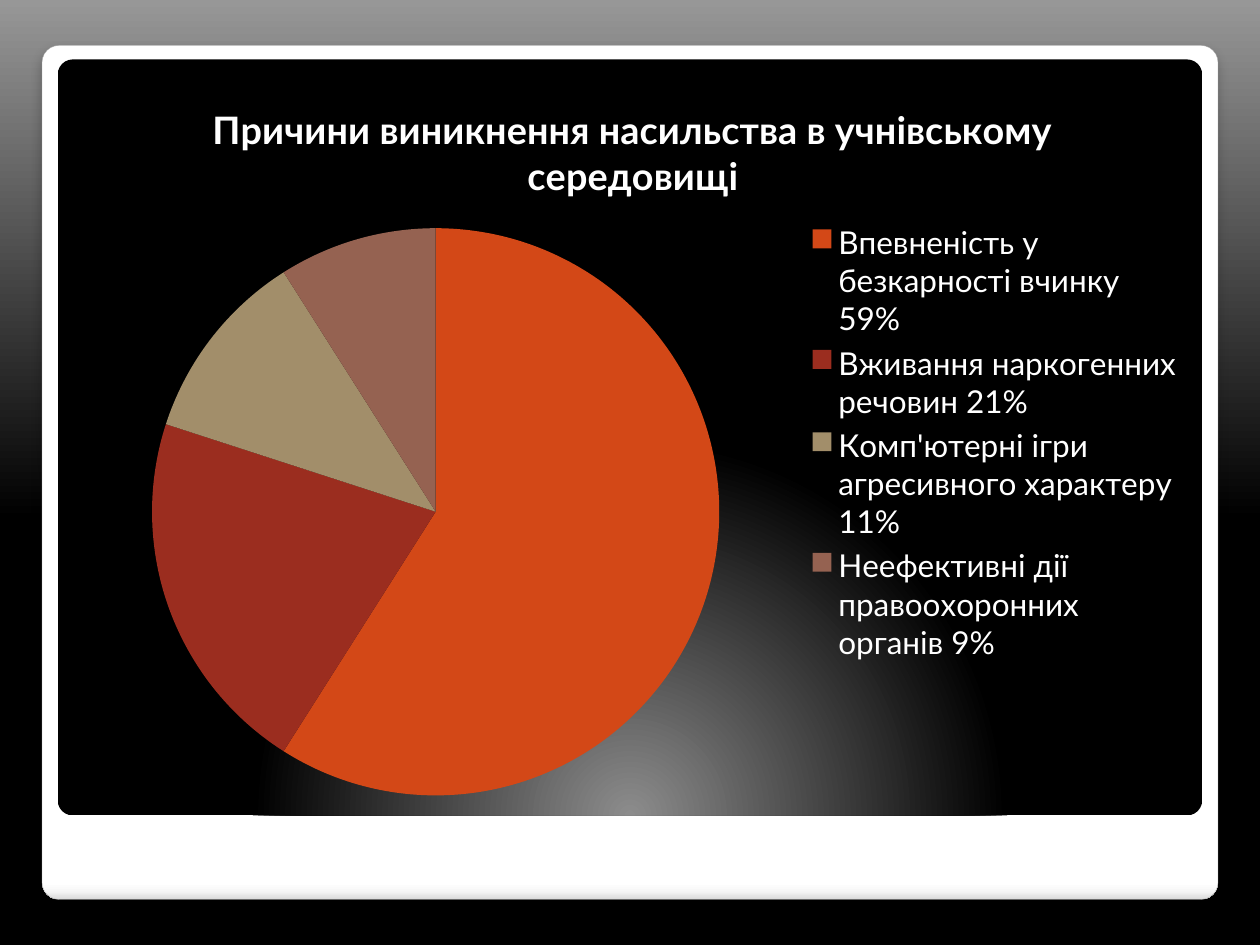
import pptx
import pptx.chart.data
import pptx.dml.color
import pptx.enum.chart
import pptx.enum.shapes
import pptx.oxml
import pptx.oxml.ns
import pptx.util

Pt = pptx.util.Pt
RGBColor = pptx.dml.color.RGBColor

BLACK = RGBColor(0x00, 0x00, 0x00)
WHITE = RGBColor(0xFF, 0xFF, 0xFF)
SKY_GRAY = RGBColor(0x97, 0x97, 0x97)
GLOW_GRAY = RGBColor(0x8C, 0x8C, 0x8C)
EDGE_LIGHT = RGBColor(0xF7, 0xF7, 0xF7)
EDGE_DARK = RGBColor(0xDA, 0xDA, 0xDA)
BORDER_GRAY = RGBColor(0xA4, 0xA4, 0xA4)
ORANGE = RGBColor(0xD3, 0x48, 0x17)
RED = RGBColor(0x9B, 0x2D, 0x1F)
SAND = RGBColor(0xA2, 0x8E, 0x6A)
BROWN = RGBColor(0x95, 0x62, 0x51)

FONT = "Lato"
TITLE = "Причини виникнення насильства в учнівському середовищі"
CAUSES = [
    ("Впевненість у безкарності вчинку 59%", 59, ORANGE),
    ("Вживання наркогенних речовин 21%", 21, RED),
    ("Комп'ютерні ігри агресивного характеру 11%", 11, SAND),
    ("Неефективні дії правоохоронних органів 9%", 9, BROWN),
]

DRAWING_NS = pptx.oxml.ns.nsdecls("a")
GLOW_FROM_BELOW = (
    '<a:path path="circle">'
    '<a:fillToRect l="50000" t="175000" r="50000" b="-75000"/></a:path>'
)


def linear(degrees):
    return f'<a:lin ang="{degrees * 60000}" scaled="0"/>'


def set_gradient(fill, parent, stops, direction):
    """Put a gradient of (percent, colour) stops where the parent's fill stands."""
    fill.solid()
    solid = parent.find(pptx.oxml.ns.qn("a:solidFill"))
    stop_xml = "".join(
        f'<a:gs pos="{percent * 1000}"><a:srgbClr val="{color}"/></a:gs>'
        for percent, color in stops
    )
    gradient = pptx.oxml.parse_xml(
        f'<a:gradFill {DRAWING_NS} rotWithShape="1">'
        f"<a:gsLst>{stop_xml}</a:gsLst>{direction}</a:gradFill>"
    )
    parent.replace(solid, gradient)


def paint_background(page):
    fill = page.background.fill
    fill.solid()
    properties = page.element.xpath("./p:cSld/p:bg/p:bgPr")[0]
    stops = [(0, BLACK), (45, BLACK), (100, SKY_GRAY)]
    set_gradient(fill, properties, stops, linear(270))


def add_panel(page, box, stops, direction):
    panel = page.shapes.add_shape(
        pptx.enum.shapes.MSO_SHAPE.ROUNDED_RECTANGLE, *map(Pt, box))
    panel.adjustments[0] = 0.02
    panel.shadow.inherit = False
    panel.line.fill.background()
    set_gradient(panel.fill, panel.element.spPr, stops, direction)
    return panel


def add_frame(page, box):
    stops = [(0, WHITE), (98, WHITE), (99, EDGE_LIGHT), (100, EDGE_DARK)]
    frame = add_panel(page, box, stops, linear(90))
    frame.line.color.rgb = BORDER_GRAY
    frame.line.width = Pt(0.16)
    effects = frame.element.spPr.find(pptx.oxml.ns.qn("a:effectLst"))
    effects.append(pptx.oxml.parse_xml(
        f'<a:outerShdw {DRAWING_NS} blurRad="{Pt(6)}" dist="{Pt(4)}" '
        'dir="5400000" algn="t" rotWithShape="0">'
        f'<a:srgbClr val="{BLACK}"><a:alpha val="25000"/></a:srgbClr>'
        "</a:outerShdw>"
    ))


def style_font(font, size, bold=False):
    font.name = FONT
    font.size = Pt(size)
    font.bold = bold
    font.color.rgb = WHITE


def place_plot(chart, left, top, width, height):
    """Fix the inner plot area, in fractions of the chart."""
    plot_area = chart.element.xpath("./c:chart/c:plotArea")[0]
    for layout in plot_area.xpath("./c:layout"):
        plot_area.remove(layout)
    plot_area.insert(0, pptx.oxml.parse_xml(
        f'<c:layout {pptx.oxml.ns.nsdecls("c")}><c:manualLayout>'
        '<c:layoutTarget val="inner"/>'
        '<c:xMode val="edge"/><c:yMode val="edge"/>'
        f'<c:x val="{left}"/><c:y val="{top}"/>'
        f'<c:w val="{width}"/><c:h val="{height}"/>'
        "</c:manualLayout></c:layout>"
    ))


def add_causes_chart(page, box):
    names, values, colors = zip(*CAUSES)
    data = pptx.chart.data.CategoryChartData()
    data.categories = names
    data.add_series(TITLE, values)
    chart = page.shapes.add_chart(
        pptx.enum.chart.XL_CHART_TYPE.PIE, *map(Pt, box), data).chart
    style_font(chart.font, 18)

    chart.has_title = True
    span = chart.chart_title.text_frame.paragraphs[0].add_run()
    span.text = TITLE
    style_font(span.font, 21.6, bold=True)
    chart.chart_title.include_in_layout = False

    chart.has_legend = True
    chart.legend.position = pptx.enum.chart.XL_LEGEND_POSITION.RIGHT
    chart.legend.include_in_layout = False
    style_font(chart.legend.font, 18)

    plot = chart.plots[0]
    plot.vary_by_categories = True
    for index, color in enumerate(colors):
        fill = plot.series[0].points[index].format.fill
        fill.solid()
        fill.fore_color.rgb = color
    place_plot(chart, 0.07, 0.21, 0.51, 0.77)


def main():
    deck = pptx.Presentation()
    deck.slide_width, deck.slide_height = Pt(720), Pt(540)
    page = deck.slides.add_slide(deck.slide_layouts[6])
    paint_background(page)
    add_frame(page, (24, 26, 672, 488))
    add_panel(page, (33, 34, 654, 432),
              [(0, GLOW_GRAY), (55, BLACK), (100, BLACK)], GLOW_FROM_BELOW)
    add_causes_chart(page, (39.5, 42, 644.5, 421))
    deck.save("out.pptx")


if __name__ == "__main__":
    main()
